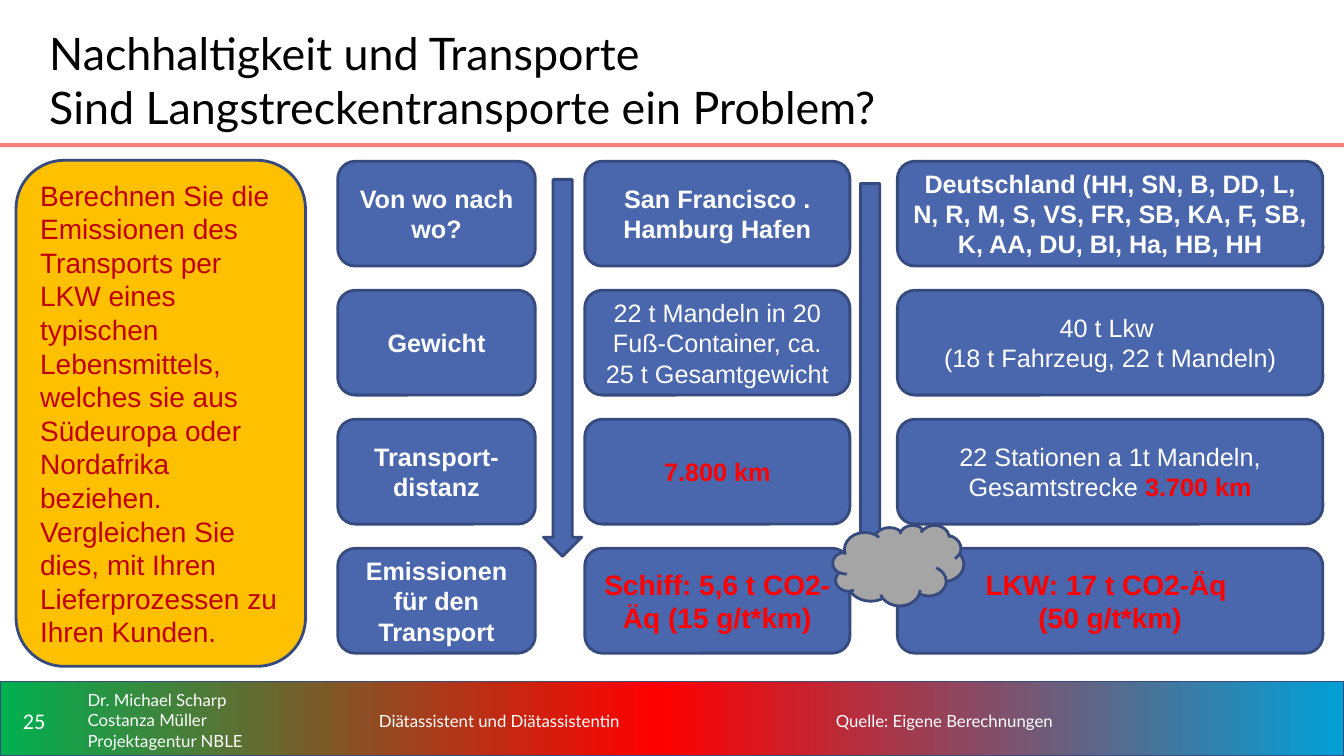
from copy import deepcopy
from dataclasses import dataclass

from pptx import Presentation
from pptx import util as u
from pptx.dml.color import RGBColor
from pptx.enum import shapes, text
from pptx.oxml import ns


@dataclass(frozen=True)
class Theme:
    blue: str = "4A66AC"
    outline: str = "364A7D"
    rule: str = "FF7E79"
    gray: str = "A5A5A5"
    amber: str = "FFC000"
    task: str = "C00000"
    red: str = "FF0000"
    white: str = "FFFFFF"
    black: str = "000000"
    footer: tuple = ((0, "00B050"), (0.49, "FF0000"), (1, "01A0D6"))
    title_size: int = 32
    result_size: int = 20
    cell_size: int = 18
    number_size: int = 16
    footer_size: int = 12
    heading_font: str = "Lato"
    body_font: str = "Arial"
    number_font: str = "Calibri"


T = Theme()
SHAPE = shapes.MSO_SHAPE
ALIGN = text.PP_ALIGN

COLUMNS = ((0, 1.96), (2.45, 2.63), (5.55, 4.22))
ROW_HEIGHT, ROW_PITCH = 1.04, 1.28
KEY = {"bold": True}
RED = {"bold": True, "color": T.red}
RESULT = {**RED, "size": T.result_size}
ROWS = (
    (
        [("Von wo nach wo?", KEY)],
        [("San Francisco . Hamburg Hafen", KEY)],
        [("Deutschland (HH, SN, B, DD, L, N, R, M, S, VS, FR, SB, KA, F, SB, "
          "K, AA, DU, BI, Ha, HB, HH", KEY)],
    ),
    (
        [("Gewicht", KEY)],
        [("22 t Mandeln in 20 Fuß-Container, ca. 25 t Gesamtgewicht", {})],
        [("40 t Lkw \n(18 t Fahrzeug, 22 t Mandeln)", {})],
    ),
    (
        [("Transport-distanz", KEY)],
        [("7.800 km", RED)],
        [("22 Stationen a 1t Mandeln, Gesamtstrecke ", {}), ("3.700 km", RED)],
    ),
    (
        [("Emissionen für den Transport", KEY)],
        [("Schiff: 5,6 t CO2-Äq (15 g/t*km)", RESULT)],
        [("LKW: 17 t CO2-Äq \n(50 g/t*km)", RESULT)],
    ),
)
TASK = (
    "Berechnen Sie die Emissionen des Transports per LKW eines typischen "
    "Lebensmittels, welches sie aus Südeuropa oder Nordafrika beziehen. "
    "Vergleichen Sie dies, mit Ihren Lieferprozessen zu Ihren Kunden."
)


def add_run(p, words, size=T.cell_size, font=T.body_font, color=T.white, bold=False):
    for i, line in enumerate(words.split("\n")):
        if i:
            p.add_line_break()
        r = p.add_run()
        r.text = line
        r.font.size = u.Pt(size)
        r.font.name = font
        r.font.bold = bold
        r.font.color.rgb = RGBColor.from_string(color)


def write(sp, paragraphs, align=ALIGN.LEFT, spacing=None, inset=0.1, **style):
    tf = sp.text_frame
    tf.word_wrap = True
    tf.vertical_anchor = text.MSO_ANCHOR.MIDDLE
    tf.margin_left = u.Inches(inset)
    for i, runs in enumerate(paragraphs):
        p = tf.add_paragraph() if i else tf.paragraphs[0]
        p.alignment = align
        if spacing:
            p.line_spacing = spacing
        for words, own in runs:
            add_run(p, words, **{**style, **own})


def add_label(s, box, lines, **style):
    sp = s.shapes.add_textbox(*map(u.Inches, box))
    write(sp, [[(line, {})] for line in lines], **style)


def add_block(s, kind, box, fill=None, line=T.outline, width=2):
    sp = s.shapes.add_shape(kind, *map(u.Inches, box))
    sp.shadow.inherit = False
    if fill:
        sp.fill.solid()
        sp.fill.fore_color.rgb = RGBColor.from_string(fill)
    if line:
        sp.line.color.rgb = RGBColor.from_string(line)
        sp.line.width = u.Pt(width)
    else:
        sp.line.fill.background()
    return sp


def add_footer(s, box):
    x, y, w, h = box
    band = add_block(s, SHAPE.RECTANGLE, box, width=1)
    band.fill.gradient()
    band.fill.gradient_angle = 0
    stop_list = band._element.spPr.find(ns.qn("a:gradFill")).find(ns.qn("a:gsLst"))
    stop_list.append(deepcopy(stop_list[0]))
    for stop, (position, color) in zip(band.fill.gradient_stops, T.footer):
        stop.position = position
        stop.color.rgb = RGBColor.from_string(color)

    top, height = y + 0.08, 0.61
    style = {"font": T.heading_font, "size": T.footer_size}
    add_label(s, (x, top, 0.68, height), ["25"], align=ALIGN.CENTER,
              font=T.number_font, size=T.number_size)
    add_label(s, (x + 0.77, top, 2.78, height),
              ["Dr. Michael Scharp", "Costanza Müller", "Projektagentur NBLE"], **style)
    add_label(s, (x + 3.66, top, 4.19, height),
              ["Diätassistent und Diätassistentin"], spacing=1.1, **style)
    add_label(s, (x + 7.94, top, 5.05, height),
              ["Quelle: Eigene Berechnungen"], spacing=1.1, inset=0.35, **style)


def add_header(s, box):
    x, y, w, h = box
    add_block(s, SHAPE.RECTANGLE, (x, y + h - 0.04, w, 0.04), T.rule, line=None)
    add_label(s, (x + 0.39, y + 0.2, 9.84, 1.18),
              ["Nachhaltigkeit und Transporte\nSind Langstreckentransporte ein Problem?"],
              font=T.heading_font, size=T.title_size, color=T.black)


def add_comparison(s, box):
    x, y, w, h = box
    for i, row in enumerate(ROWS):
        for (left, width), runs in zip(COLUMNS, row):
            cell = add_block(s, SHAPE.ROUNDED_RECTANGLE,
                             (x + left, y + i * ROW_PITCH, width, ROW_HEIGHT), T.blue)
            write(cell, [runs], align=ALIGN.CENTER)
    for left, top, height in ((2.04, 0.18, 3.74), (5.09, 0.22, 3.81)):
        add_block(s, SHAPE.DOWN_ARROW, (x + left, y + top, 0.38, height), T.blue)
    add_block(s, SHAPE.CLOUD, (x + 4.91, y + 3.61, 1.3, 0.8), T.gray)


def add_task(s, box):
    panel = add_block(s, SHAPE.ROUNDED_RECTANGLE, box, T.amber)
    write(panel, [[(TASK, {})]], size=T.result_size, color=T.task)


def main():
    prs = Presentation()
    prs.slide_width, prs.slide_height = u.Inches(13.33), u.Inches(7.5)
    s = prs.slides.add_slide(prs.slide_layouts[6])
    add_footer(s, (0, 6.76, 13.33, 0.74))
    add_header(s, (0, 0, 13.33, 1.46))
    add_comparison(s, (3.35, 1.6, 9.77, 4.88))
    add_task(s, (0.16, 1.59, 2.87, 5.02))
    prs.save("out.pptx")


if __name__ == "__main__":
    main()
